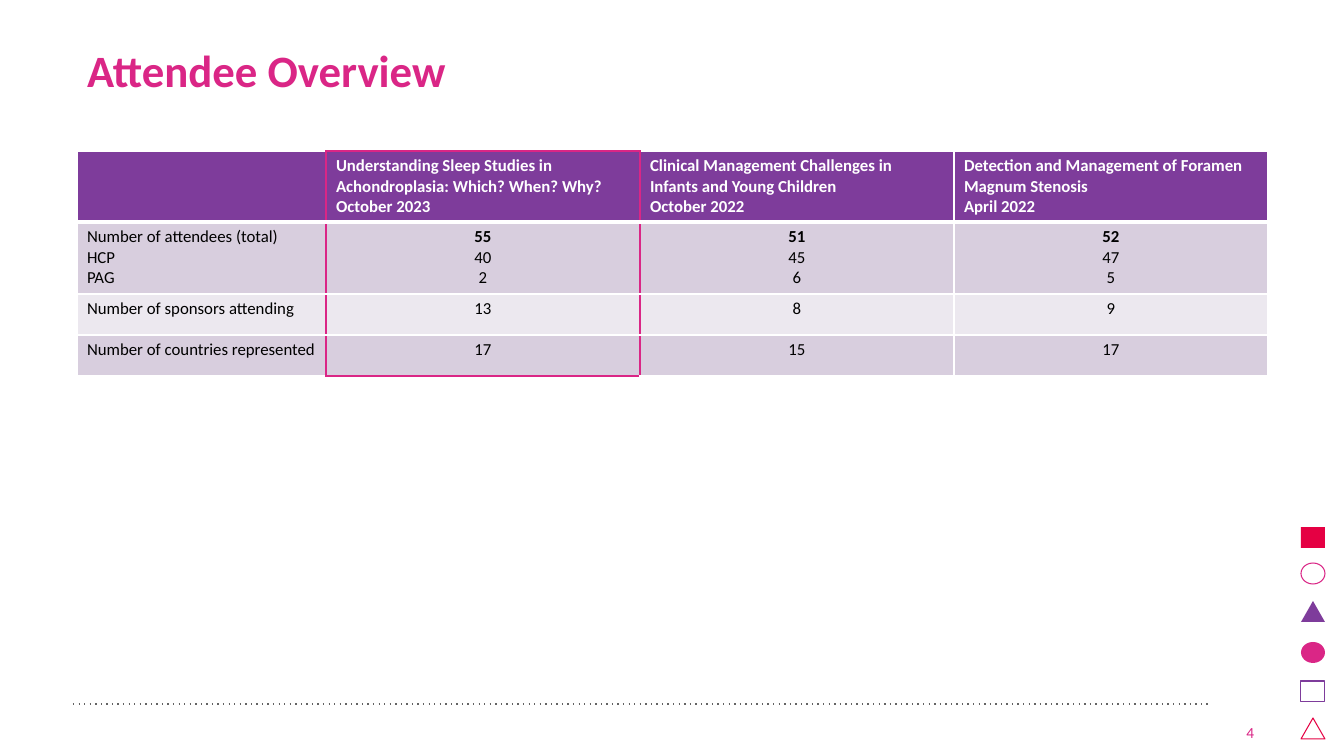
"""Build the attendee overview slide with its table and side icons."""
from dataclasses import dataclass

from lxml import etree
from pptx import Presentation
from pptx.dml.color import RGBColor
from pptx.enum.shapes import MSO_CONNECTOR, MSO_SHAPE
from pptx.enum.text import MSO_ANCHOR, PP_ALIGN
from pptx.oxml.ns import qn
from pptx.util import Pt

RECT, OVAL, TRI = MSO_SHAPE.RECTANGLE, MSO_SHAPE.OVAL, MSO_SHAPE.ISOSCELES_TRIANGLE
STRAIGHT = MSO_CONNECTOR.STRAIGHT
LEFT, CENTER, RIGHT = PP_ALIGN.LEFT, PP_ALIGN.CENTER, PP_ALIGN.RIGHT
MIDDLE, BOTTOM = MSO_ANCHOR.MIDDLE, MSO_ANCHOR.BOTTOM
SCALE = 914400 / 100.8


@dataclass
class Theme:
    font: str = "Calibri"
    pink: str = "DA2686"
    red: str = "E50043"
    purple: str = "7E3C9B"
    dark: str = "D8CEDE"
    light: str = "ECE8EF"
    gray: str = "646464"
    white: str = "FFFFFF"
    black: str = "000000"
    title: int = 32
    body: int = 12
    note: int = 11


def px(*sizes):
    return [round(size * SCALE) for size in sizes]


def paint(fill, color):
    fill.solid()
    fill.fore_color.rgb = RGBColor.from_string(color)


def write(frame, text, font, size, color, bold=False, lead=False, align=LEFT, space=None):
    frame.word_wrap = True
    for i, line in enumerate(text.split("\n")):
        para = frame.paragraphs[0] if i == 0 else frame.add_paragraph()
        para.alignment = align
        para.line_spacing = space
        run = para.add_run()
        run.text = line
        run.font.name, run.font.size = font, Pt(size)
        run.font.bold = bold or (lead and i == 0)
        run.font.color.rgb = RGBColor.from_string(color)


class Deck:
    def __init__(self, theme):
        self.theme = theme
        self.file = Presentation()
        self.file.slide_width, self.file.slide_height = px(1344, 756)
        self.slide = self.file.slides.add_slide(self.file.slide_layouts[5])
        self.shapes = self.slide.shapes

    def title(self, text, x, y, w, h):
        box = self.shapes.title
        box.left, box.top, box.width, box.height = px(x, y, w, h)
        box.text_frame.vertical_anchor = MIDDLE
        write(box.text_frame, text, self.theme.font, self.theme.title,
              self.theme.pink, bold=True, space=0.9)

    def label(self, text, x, y, w, h):
        frame = self.shapes.add_textbox(*px(x, y, w, h)).text_frame
        frame.vertical_anchor = BOTTOM
        write(frame, text, self.theme.font, self.theme.note, self.theme.pink, align=RIGHT)

    def icon(self, kind, x, y, w, h, color, solid):
        shape = self.shapes.add_shape(kind, *px(x, y, w, h))
        shape.shadow.inherit = False
        if solid:
            paint(shape.fill, color)
            shape.line.fill.background()
        else:
            shape.fill.background()
            paint(shape.line.fill, color)
            shape.line.width = Pt(0.75)

    def rule(self, x, y, end):
        line = self.shapes.add_connector(STRAIGHT, *px(x, y, end, y))
        paint(line.line.fill, self.theme.gray)
        line.line.width = Pt(1)
        props = line.element.spPr
        etree.SubElement(props.find(qn("a:ln")), qn("a:prstDash"), val="dot")
        etree.SubElement(props, qn("a:effectLst"))

    def edges(self, cell, sides):
        props = cell._tc.get_or_add_tcPr()
        for i, (side, (color, width)) in enumerate(sides.items()):
            line = etree.Element(qn(f"a:ln{side}"), w=str(Pt(width)))
            fill = etree.SubElement(line, qn("a:solidFill"))
            etree.SubElement(fill, qn("a:srgbClr"), val=color)
            props.insert(i, line)

    def table(self, rows, x, y, widths, heights, focus):
        look = self.theme
        size = px(x, y, sum(widths), sum(heights))
        grid = self.shapes.add_table(len(rows), len(widths), *size).table
        grid.first_row = grid.horz_banding = False
        for col, width in zip(grid.columns, px(*widths)):
            col.width = width
        for row, height in zip(grid.rows, px(*heights)):
            row.height = height
        thin, thick, accent = (look.white, 1), (look.white, 3), (look.pink, 1)
        last = len(rows) - 1
        for r, row in enumerate(rows):
            head = r == 0
            tint = look.purple if head else (look.light, look.dark)[r % 2]
            for c, text in enumerate(row):
                cell = grid.cell(r, c)
                paint(cell.fill, tint)
                write(cell.text_frame, text, look.font, look.body,
                      look.white if head else look.black, bold=head,
                      lead="\n" in text and c > 0,
                      align=CENTER if c and not head else LEFT)
                mark = c == focus
                self.edges(cell, {
                    "L": accent if c in (focus, focus + 1) else thin,
                    "R": accent if c in (focus - 1, focus) else thin,
                    "T": accent if mark and head else thick if r == 1 else thin,
                    "B": thick if head else accent if mark and r == last else thin,
                })


ROWS = [
    ("",
     "Understanding Sleep Studies in Achondroplasia: Which? When? Why?\nOctober 2023",
     "Clinical Management Challenges in Infants and Young Children\nOctober 2022",
     "Detection and Management of Foramen Magnum Stenosis\nApril 2022"),
    ("Number of attendees (total)\nHCP\nPAG", "55\n40\n2", "51\n45\n6", "52\n47\n5"),
    ("Number of sponsors attending", "13", "8", "9"),
    ("Number of countries represented", "17", "15", "17"),
]


def main():
    look = Theme()
    deck = Deck(look)
    icons = [
        (RECT, 527, look.red, True),
        (OVAL, 563, look.pink, False),
        (TRI, 601, look.purple, True),
        (OVAL, 642, look.pink, True),
        (RECT, 681, look.purple, False),
        (TRI, 718, look.red, False),
    ]
    for kind, y, color, solid in icons:
        deck.icon(kind, 1301, y, 24, 21, color, solid)
    deck.rule(73, 704, 1209)
    deck.title("Attendee Overview", 77, 17, 1190, 113)
    deck.label("4", 1206, 707, 58, 40)
    deck.table(ROWS, 77, 151, [249, 314, 314, 314], [71, 72, 41, 41], focus=1)
    deck.file.save("out.pptx")


if __name__ == "__main__":
    main()
